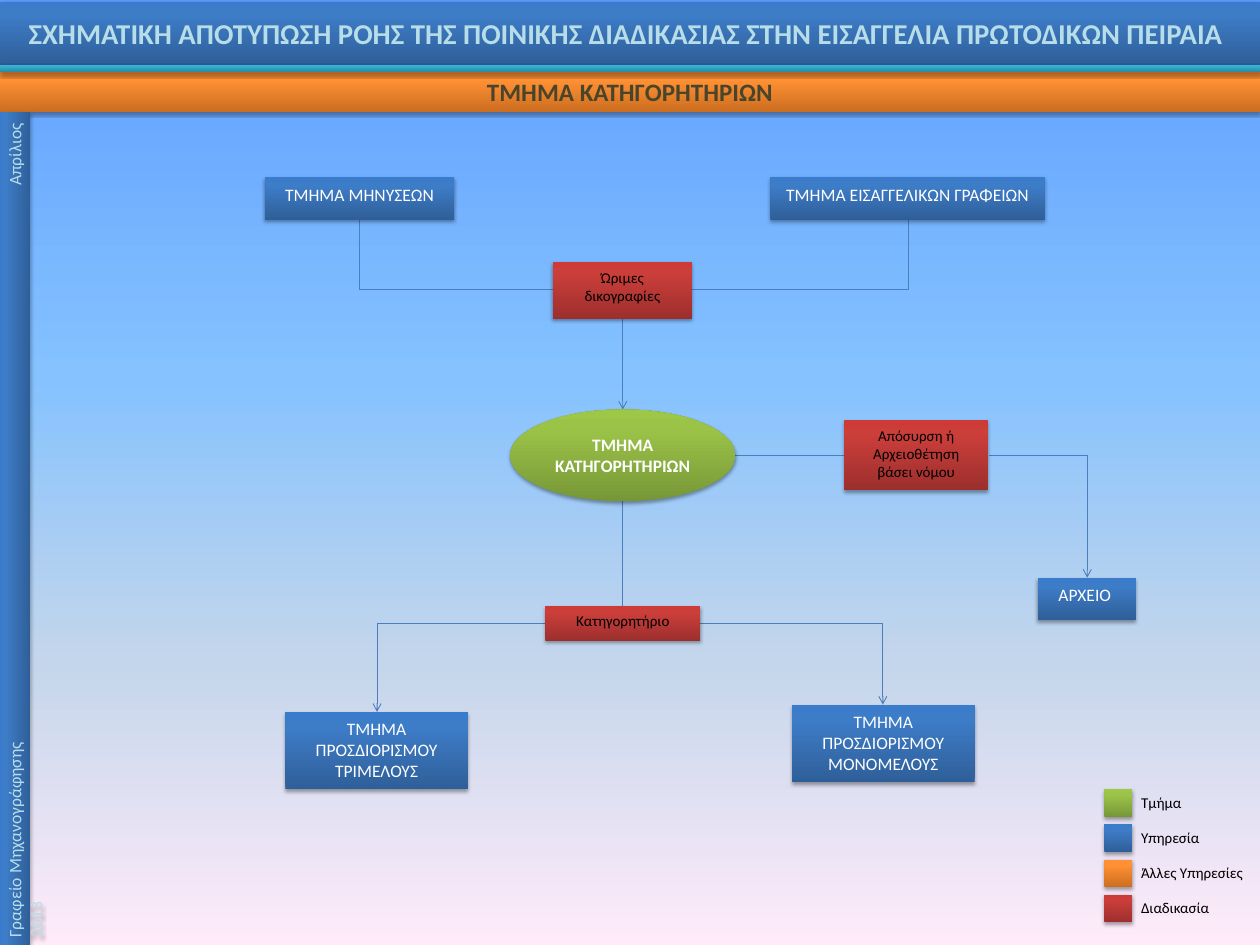
from lxml import etree
from pptx import Presentation
from pptx.dml.color import RGBColor
from pptx.enum import shapes, text
from pptx.oxml.ns import qn
from pptx.util import Inches, Pt

BLUE = ("2F5F99", "3D7CC7", "3A7CCB")
GREEN = ("779737", "9BC348", "9DC746")
ORANGE = ("CC6E20", "FF9034", "FF9136")
RED = ("9C2F2D", "CB3E3A", "CE3B37")
TEAL = ("2A88A2", "37B1D2", "34B4D6")
SHAPE = shapes.MSO_SHAPE
ALIGN = text.PP_ALIGN
ANCHOR = text.MSO_ANCHOR
rgb = RGBColor.from_string


def paint(fill, owner, stops, angle):
    """Give fill a linear gradient; owner is the XML element holding it."""
    fill.gradient()
    fill.gradient_angle = angle
    gs_list = owner.find(".//" + qn("a:gsLst"))
    gs_list.clear()
    for pos, color in stops:
        gs = etree.SubElement(gs_list, qn("a:gs"), pos=str(pos * 1000))
        etree.SubElement(gs, qn("a:srgbClr"), val=color)


def box(content, at, colors=None, kind=SHAPE.RECTANGLE, size=14, color="FFFFFF",
        bold=False, align=ALIGN.CENTER, anchor=ANCHOR.TOP, inset=(0.14, 0.07),
        tab=None):
    """Add a shaded shape, or a plain text box when no colors are given."""
    at = [Inches(v) for v in at]
    if colors:
        sp = s.shapes.add_shape(kind, *at)
        paint(sp.fill, sp.element, zip((0, 80, 100), colors), 90)
        sp.line.fill.background()
        sp.shadow.inherit = False
        effects = sp.element.spPr.find(qn("a:effectLst"))
        shadow = etree.SubElement(effects, qn("a:outerShdw"), blurRad=str(Pt(3.1)),
                                  dist=str(Pt(1.8)), dir="5400000", rotWithShape="0")
        black = etree.SubElement(shadow, qn("a:srgbClr"), val="000000")
        etree.SubElement(black, qn("a:alpha"), val="35000")
    else:
        sp = s.shapes.add_textbox(*at)
    tf = sp.text_frame
    tf.word_wrap = True
    tf.vertical_anchor = anchor
    tf.margin_left = tf.margin_right = Inches(inset[0])
    tf.margin_top = tf.margin_bottom = Inches(inset[1])
    tf.text = content
    for p in tf.paragraphs:
        p.alignment = align
        if tab:
            tabs = etree.SubElement(p._p.get_or_add_pPr(), qn("a:tabLst"))
            etree.SubElement(tabs, qn("a:tab"), pos=str(Inches(tab)), algn="r")
        for r in p.runs:
            r.font.name = "Calibri"
            r.font.size = Pt(size)
            r.font.bold = bold
            r.font.color.rgb = rgb(color)
    return sp


prs = Presentation()
prs.slide_width, prs.slide_height = Inches(14), Inches(10.5)
s = prs.slides.add_slide(prs.slide_layouts[6])
paint(s.background.fill, s.element,
      [(0, "5E9EFF"), (40, "85C2FF"), (70, "C4D6EB"), (100, "FFEBFA")], 270)

# Flow lines: start, end, arrowhead; a bent line leaves its start horizontally
STRAIGHT, BENT = shapes.MSO_CONNECTOR.STRAIGHT, shapes.MSO_CONNECTOR.ELBOW
flows = [
    (BENT, (6.14, 3.22), (3.99, 2.44), False),
    (BENT, (7.69, 3.22), (10.09, 2.44), False),
    (STRAIGHT, (6.92, 3.53), (6.92, 4.55), True),
    (STRAIGHT, (8.17, 5.06), (9.38, 5.06), False),
    (BENT, (10.99, 5.06), (12.08, 6.42), True),
    (STRAIGHT, (6.92, 5.56), (6.92, 6.74), False),
    (BENT, (6.06, 6.93), (4.19, 7.91), True),
    (BENT, (7.78, 6.93), (9.81, 7.83), True),
]
for kind, start, end, arrow in flows:
    cx = s.shapes.add_connector(kind, *[Inches(v) for v in start + end])
    cx.line.color.rgb = rgb("4B7EBC")
    cx.line.width = Pt(0.75)
    spPr = cx.element.spPr
    if kind == BENT:
        spPr.find(qn("a:prstGeom")).set("prst", "bentConnector2")
    if arrow:
        etree.SubElement(spPr.find(qn("a:ln")), qn("a:tailEnd"), type="arrow")
    etree.SubElement(spPr, qn("a:effectLst"))

# Departments and services
box("ΤΜΗΜΑ ΚΑΤΗΓΟΡΗΤΗΡΙΩΝ", (5.67, 4.55, 2.5, 1.02), GREEN, kind=SHAPE.OVAL,
    bold=True, anchor=ANCHOR.MIDDLE, inset=(0.1, 0.05))
services = [
    ("ΤΜΗΜΑ ΜΗΝΥΣΕΩΝ", (2.94, 1.97, 2.11, 0.47)),
    ("ΤΜΗΜΑ ΕΙΣΑΓΓΕΛΙΚΩΝ ΓΡΑΦΕΙΩΝ", (8.56, 1.97, 3.05, 0.47)),
    ("ΑΡΧΕΙΟ ", (11.53, 6.42, 1.09, 0.47)),
    ("ΤΜΗΜΑ ΠΡΟΣΔΙΟΡΙΣΜΟΥ ΤΡΙΜΕΛΟΥΣ", (3.17, 7.91, 2.03, 0.86)),
    ("ΤΜΗΜΑ ΠΡΟΣΔΙΟΡΙΣΜΟΥ ΜΟΝΟΜΕΛΟΥΣ", (8.8, 7.83, 2.03, 0.86)),
]
for name, at in services:
    box(name, at, BLUE)

# Procedures
procedures = [
    ("Ώριμες\nδικογραφίες", (6.14, 2.91, 1.55, 0.63)),
    ("Απόσυρση ή\nΑρχειοθέτηση\nβάσει νόμου", (9.38, 4.67, 1.6, 0.78)),
    ("Κατηγορητήριο", (6.06, 6.73, 1.72, 0.39)),
]
for name, at in procedures:
    box(name, at, RED, size=12, color="000000")

# Legend
legend = [("Τμήμα", GREEN), ("Υπηρεσία", BLUE),
          ("Άλλες Υπηρεσίες", ORANGE), ("Διαδικασία", RED)]
for i, (name, colors) in enumerate(legend):
    top = 8.77 + 0.39 * i
    box("", (12.27, top, 0.31, 0.31), colors)
    box(name, (12.58, top, 1.42, 0.3), size=12, color="000000",
        align=ALIGN.LEFT, inset=(0.1, 0.05))

# Title bars and side bar
box("ΤΜΗΜΑ ΚΑΤΗΓΟΡΗΤΗΡΙΩΝ", (0, 0.8, 14, 0.44), ORANGE, size=20,
    color="4A452A", bold=True, inset=(0.1, 0.05))
box("ΣΧΗΜΑΤΙΚΗ ΑΠΟΤΥΠΩΣΗ ΡΟΗΣ ΤΗΣ ΠΟΙΝΙΚΗΣ ΔΙΑΔΙΚΑΣΙΑΣ ΣΤΗΝ ΕΙΣΑΓΓΕΛΙΑ "
    "ΠΡΩΤΟΔΙΚΩΝ ΠΕΙΡΑΙΑ ", (0, 0.02, 14, 0.7), BLUE, size=23, color="B7DEE8",
    bold=True, anchor=ANCHOR.MIDDLE)
side = box("Γραφείο Μηχανογράφησης\tΑπρίλιος\v2013", (-4.47, 5.71, 9.27, 0.34), BLUE,
           color="B7DEE8", align=ALIGN.LEFT, inset=(0.1, 0.05), tab=9.05)
side.rotation = 270
box("", (0, 0.72, 14, 0.08), TEAL)

prs.save("out.pptx")
